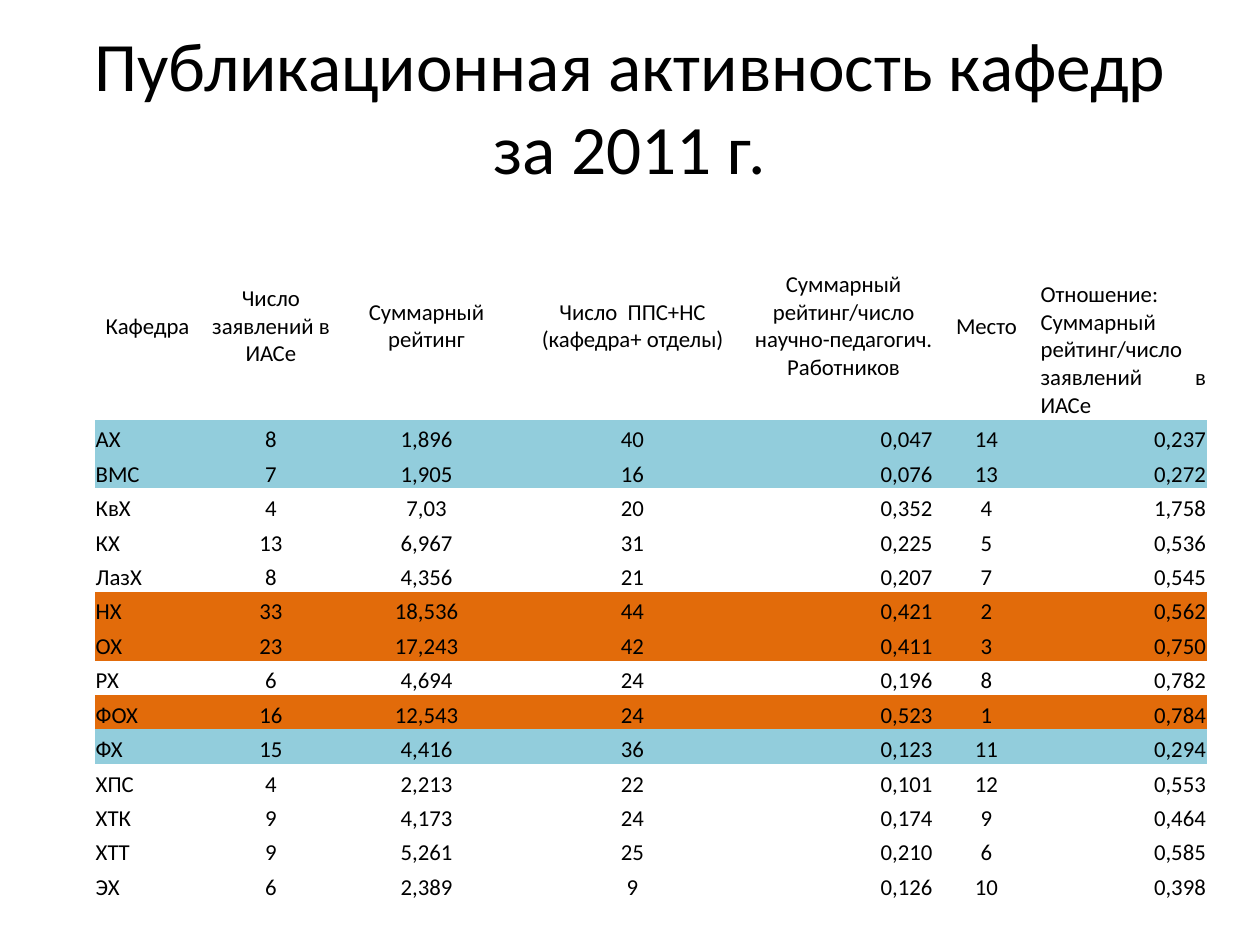
from dataclasses import dataclass
from typing import NamedTuple

from pptx import Presentation
from pptx.dml.color import RGBColor
from pptx.enum.text import MSO_ANCHOR as Anchor, PP_ALIGN as Align
from pptx.oxml.ns import qn
from pptx.util import Inches, Pt


@dataclass(frozen=True)
class Theme:
    font: str = "Calibri"
    text: RGBColor = RGBColor(0x00, 0x00, 0x00)
    low: RGBColor = RGBColor(0x92, 0xCD, 0xDC)
    leader: RGBColor = RGBColor(0xE2, 0x6B, 0x0A)
    title_size: float = 39.6
    table_size: float = 13
    spacer_size: float = 11


class Column(NamedTuple):
    heading: str
    width: float
    align: Align
    heading_align: Align = Align.CENTER
    heading_anchor: Anchor = Anchor.MIDDLE


class Department(NamedTuple):
    values: str
    fill: RGBColor | None = None


THEME = Theme()
NO_STYLE_NO_GRID = "{2D5ABB26-0587-4C30-8999-92F81FD0307C}"
TABLE_LEFT, TABLE_TOP, TABLE_HEIGHT = 0.75, 1.62, 5.54
SPACER_HEIGHT, HEADING_HEIGHT = 0.22, 1.49

COLUMNS = [
    Column("Кафедра", 0.84, Align.LEFT),
    Column("Число заявлений в ИАСе", 1.12, Align.CENTER),
    Column("Суммарный рейтинг", 1.35, Align.CENTER),
    Column("Число  ППС+НС (кафедра+ отделы)", 1.92, Align.CENTER),
    Column("Суммарный рейтинг/число научно-педагогич. Работников", 1.43, Align.RIGHT),
    Column("Место", 0.84, Align.CENTER),
    Column("Отношение: Суммарный рейтинг/число заявлений в ИАСе", 1.33,
           Align.RIGHT, Align.JUSTIFY, Anchor.BOTTOM),
]

DEPARTMENTS = [
    Department("АХ 8 1,896 40 0,047 14 0,237", THEME.low),
    Department("ВМС 7 1,905 16 0,076 13 0,272", THEME.low),
    Department("КвХ 4 7,03 20 0,352 4 1,758"),
    Department("КХ 13 6,967 31 0,225 5 0,536"),
    Department("ЛазХ 8 4,356 21 0,207 7 0,545"),
    Department("НХ 33 18,536 44 0,421 2 0,562", THEME.leader),
    Department("ОХ 23 17,243 42 0,411 3 0,750", THEME.leader),
    Department("РХ 6 4,694 24 0,196 8 0,782"),
    Department("ФОХ 16 12,543 24 0,523 1 0,784", THEME.leader),
    Department("ФХ 15 4,416 36 0,123 11 0,294", THEME.low),
    Department("ХПС 4 2,213 22 0,101 12 0,553"),
    Department("ХТК 9 4,173 24 0,174 9 0,464"),
    Department("ХТТ 9 5,261 25 0,210 6 0,585"),
    Department("ЭХ 6 2,389 9 0,126 10 0,398"),
]


def format_paragraph(paragraph, size: float, align: Align) -> None:
    paragraph.alignment = align
    paragraph.font.name = THEME.font
    paragraph.font.size = Pt(size)
    paragraph.font.color.rgb = THEME.text


def fill_cell(cell, text: str, align: Align, anchor: Anchor = Anchor.BOTTOM,
              fill: RGBColor | None = None, size: float = THEME.table_size) -> None:
    cell.margin_left = cell.margin_right = cell.margin_top = Inches(0.01)
    cell.margin_bottom = 0
    cell.vertical_anchor = anchor
    cell.text = text
    format_paragraph(cell.text_frame.paragraphs[0], size, align)
    if fill is None:
        cell.fill.background()
    else:
        cell.fill.solid()
        cell.fill.fore_color.rgb = fill


def add_title(slide, text: str) -> None:
    title = slide.shapes.title
    title.left, title.top = Inches(0.5), Inches(0.21)
    title.width, title.height = Inches(9), Inches(1.25)
    title.text_frame.text = text
    title.text_frame.vertical_anchor = Anchor.MIDDLE
    format_paragraph(title.text_frame.paragraphs[0], THEME.title_size, Align.CENTER)


def add_department_table(slide) -> None:
    """Add the ratings under an empty spacer row and a row of headings."""
    width = sum(column.width for column in COLUMNS)
    frame = slide.shapes.add_table(
        len(DEPARTMENTS) + 2, len(COLUMNS), Inches(TABLE_LEFT), Inches(TABLE_TOP),
        Inches(width), Inches(TABLE_HEIGHT))
    for style in frame.element.iter(qn("a:tableStyleId")):
        style.text = NO_STYLE_NO_GRID
    table = frame.table
    table.first_row = table.horz_banding = False

    data_height = (TABLE_HEIGHT - SPACER_HEIGHT - HEADING_HEIGHT) / len(DEPARTMENTS)
    heights = [SPACER_HEIGHT, HEADING_HEIGHT] + [data_height] * len(DEPARTMENTS)
    for row, height in zip(table.rows, heights):
        row.height = Inches(height)

    for index, column in enumerate(COLUMNS):
        table.columns[index].width = Inches(column.width)
        fill_cell(table.cell(0, index), "", column.align, size=THEME.spacer_size)
        fill_cell(table.cell(1, index), column.heading,
                  column.heading_align, column.heading_anchor)
        for row_index, department in enumerate(DEPARTMENTS, start=2):
            fill_cell(table.cell(row_index, index), department.values.split()[index],
                      column.align, fill=department.fill)


def main() -> None:
    presentation = Presentation()
    presentation.slide_width, presentation.slide_height = Inches(10), Inches(7.5)
    slide = presentation.slides.add_slide(presentation.slide_layouts[5])
    add_department_table(slide)
    add_title(slide, "Публикационная активность кафедр за 2011 г.")
    presentation.save("out.pptx")


if __name__ == "__main__":
    main()
